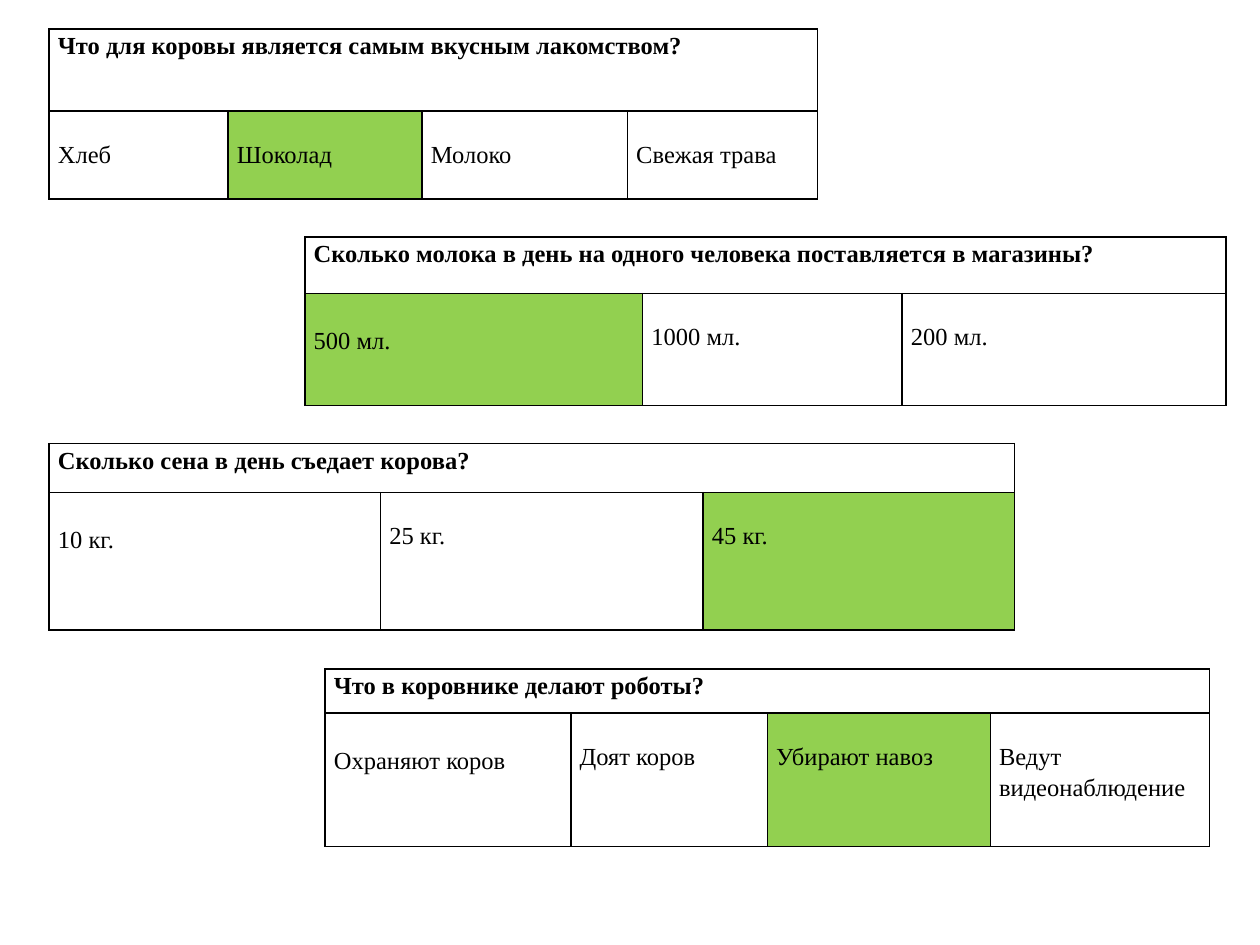
from dataclasses import dataclass

import pptx
import pptx.dml.color
import pptx.enum.text
import pptx.oxml
import pptx.oxml.ns
import pptx.util
from pptx.util import Inches

COLORS = {"ink": "000000", "correct": "92D050"}
FONT = "Times New Roman"
ANSWER_TOP = 0.21
TALL_ANSWER_TOP = 0.24


@dataclass
class Question:
    text: str
    answers: list[str]
    correct: int
    left: float
    top: float
    widths: list[float]
    heights: list[float]
    first_answer_top: float = TALL_ANSWER_TOP


QUESTIONS = [
    Question("Что для коровы является самым вкусным лакомством?",
             ["Хлеб", "Шоколад", "Молоко", "Свежая трава"], 1,
             0.39, 0.23, [1.42, 1.54, 1.63, 1.51], [0.65, 0.7], ANSWER_TOP),
    Question("Сколько молока в день на одного человека поставляется в магазины?",
             ["500 мл.", "1000 мл.", "200 мл."], 0,
             2.42, 1.88, [2.68, 2.06, 2.57], [0.45, 0.89]),
    Question("Сколько сена в день съедает корова?",
             ["10 кг.", "25 кг.", "45 кг."], 2,
             0.39, 3.52, [2.63, 2.56, 2.47], [0.39, 1.09]),
    Question("Что в коровнике делают роботы?",
             ["Охраняют коров", "Доят коров", "Убирают навоз", "Ведут видеонаблюдение"], 2,
             2.58, 5.31, [1.95, 1.56, 1.77, 1.74], [0.35, 1.06]),
]


def rgb(name: str) -> pptx.dml.color.RGBColor:
    return pptx.dml.color.RGBColor.from_string(COLORS[name])


def write_text(cell, text: str, *, bold: bool = False, size: float = 14,
               top: float = 0) -> None:
    cell.margin_left = cell.margin_right = Inches(0.07)
    cell.margin_top, cell.margin_bottom = Inches(top), Inches(0)
    p = cell.text_frame.paragraphs[0]
    p.alignment = pptx.enum.text.PP_ALIGN.JUSTIFY
    p.line_spacing = 1.15
    r = p.add_run()
    r.text = text
    r.font.name = FONT
    r.font.size = pptx.util.Pt(size)
    r.font.bold = bold
    r.font.color.rgb = rgb("ink")


def style_cell(cell, fill: str | None = None) -> None:
    """Draw a thin line on all four sides and set the fill."""
    tc_pr = cell._tc.get_or_add_tcPr()
    for side in ("lnL", "lnR", "lnT", "lnB"):
        tc_pr.append(pptx.oxml.parse_xml(
            f'<a:{side} {pptx.oxml.ns.nsdecls("a")} w="{pptx.util.Pt(1)}">'
            f'<a:solidFill><a:srgbClr val="{COLORS["ink"]}"/></a:solidFill></a:{side}>'))
    if fill:
        cell.fill.solid()
        cell.fill.fore_color.rgb = rgb(fill)
    else:
        cell.fill.background()


def add_question(slide, q: Question) -> None:
    table = slide.shapes.add_table(
        2, len(q.answers), Inches(q.left), Inches(q.top),
        Inches(sum(q.widths)), Inches(sum(q.heights))).table
    table.first_row = table.horz_banding = False
    for column, width in zip(table.columns, q.widths):
        column.width = Inches(width)
    for row, height in zip(table.rows, q.heights):
        row.height = Inches(height)

    header = table.cell(0, 0)
    header.merge(table.cell(0, len(q.answers) - 1))
    write_text(header, q.text, bold=True)
    for i, answer in enumerate(q.answers):
        style_cell(table.cell(0, i))
        cell = table.cell(1, i)
        write_text(cell, answer, top=ANSWER_TOP if i else q.first_answer_top)
        style_cell(cell, "correct" if i == q.correct else None)


def main() -> None:
    prs = pptx.Presentation()
    prs.slide_width, prs.slide_height = Inches(10), Inches(7.5)
    slide = prs.slides.add_slide(prs.slide_layouts[6])
    for q in QUESTIONS:
        add_question(slide, q)
    prs.save("out.pptx")


if __name__ == "__main__":
    main()
